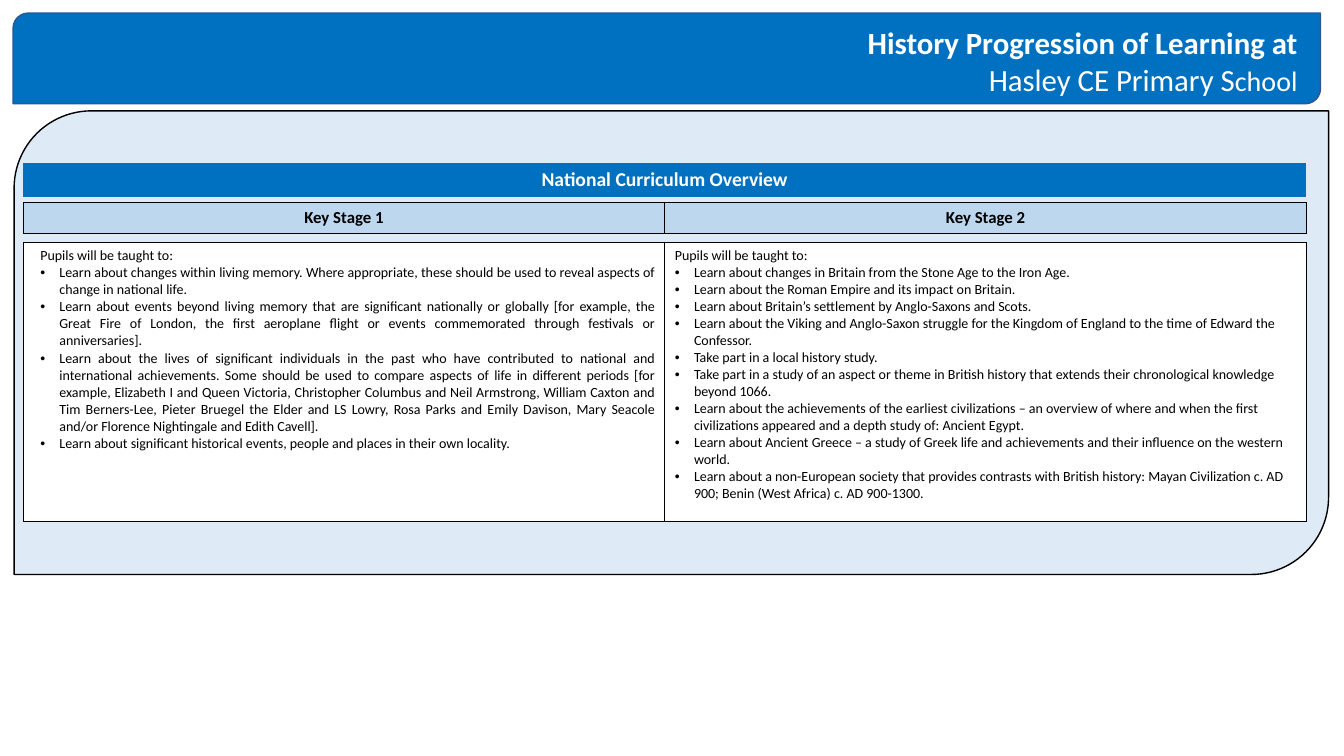
from dataclasses import dataclass

import lxml.etree
import pptx
import pptx.dml.color
import pptx.enum.shapes
import pptx.enum.text
import pptx.oxml
import pptx.oxml.ns
import pptx.util

ALIGN = pptx.enum.text.PP_ALIGN
UNIT = 0.1  # inches in one grid column or row


@dataclass(frozen=True)
class Theme:
    font: str = "Calibri"
    blue: str = "0070C0"
    navy: str = "325491"
    pale: str = "DEEBF7"
    sky: str = "BDD7EE"
    white: str = "FFFFFF"
    black: str = "000000"
    title: float = 22
    small: float = 20
    band: float = 14
    head: float = 12
    body: float = 10


THEME = Theme()


@dataclass(frozen=True)
class Box:
    """A place on the grid, in columns and rows."""
    left: float
    top: float
    width: float
    height: float

    def emus(self) -> list[int]:
        return [grid(n) for n in (self.left, self.top, self.width, self.height)]


@dataclass(frozen=True)
class Run:
    text: str
    size: float
    color: str = THEME.black
    bold: bool = False


@dataclass(frozen=True)
class Para:
    runs: list[Run]
    align: ALIGN = ALIGN.LEFT
    left: float = 0
    hang: float = 0
    line: float = 0


@dataclass(frozen=True)
class Panel:
    box: Box
    fill: str
    edge: str


@dataclass(frozen=True)
class Table:
    box: Box
    fill: str
    cells: list[list[Para]]
    edge: float = 0.5
    anchor: pptx.enum.text.MSO_ANCHOR = pptx.enum.text.MSO_ANCHOR.MIDDLE


def grid(count: float) -> int:
    return pptx.util.Inches(count * UNIT)


def rgb(color: str) -> pptx.dml.color.RGBColor:
    return pptx.dml.color.RGBColor.from_string(color)


def write(frame, paras: list[Para]) -> None:
    for i, item in enumerate(paras):
        para = frame.paragraphs[0] if i == 0 else frame.add_paragraph()
        para.alignment = item.align
        if item.line:
            para.line_spacing = pptx.util.Pt(item.line)
            para.space_before = pptx.util.Pt(0.1)
        props = para._p.get_or_add_pPr()
        props.set("marL", str(grid(item.left)))
        props.set("indent", str(grid(-item.hang)))
        if item.hang:
            tag = pptx.oxml.ns.qn
            lxml.etree.SubElement(props, tag("a:buFont"), typeface="Arial")
            lxml.etree.SubElement(props, tag("a:buChar"), char="•")
        for part in item.runs:
            run = para.add_run()
            run.text = part.text
            run.font.name = THEME.font
            run.font.size = pptx.util.Pt(part.size)
            run.font.bold = part.bold
            run.font.color.rgb = rgb(part.color)


def outline(cell, width: float) -> None:
    """Set all four cell borders; a width of 0 hides them."""
    props = cell._tc.get_or_add_tcPr()
    paint = (f'<a:solidFill><a:srgbClr val="{THEME.black}"/></a:solidFill>'
             if width else "<a:noFill/>")
    space = pptx.oxml.ns.nsdecls("a")
    for i, side in enumerate("LRTB"):
        props.insert(i, pptx.oxml.parse_xml(
            f'<a:ln{side} {space} w="{pptx.util.Pt(width)}">{paint}</a:ln{side}>'))


def add_panel(slide, panel: Panel) -> None:
    kind = pptx.enum.shapes.MSO_SHAPE.ROUND_2_DIAG_RECTANGLE
    shape = slide.shapes.add_shape(kind, *panel.box.emus())
    shape.shadow.inherit = False
    shape.fill.solid()
    shape.fill.fore_color.rgb = rgb(panel.fill)
    shape.line.color.rgb = rgb(panel.edge)
    shape.line.width = pptx.util.Pt(1)


def add_text(slide, box: Box, paras: list[Para]) -> None:
    frame = slide.shapes.add_textbox(*box.emus()).text_frame
    frame.word_wrap = True
    frame.auto_size = pptx.enum.text.MSO_AUTO_SIZE.SHAPE_TO_FIT_TEXT
    write(frame, paras)


def add_table(slide, spec: Table) -> None:
    table = slide.shapes.add_table(1, len(spec.cells), *spec.box.emus()).table
    table.first_row = False
    table.horz_banding = False
    for cell, paras in zip(table.iter_cells(), spec.cells):
        cell.fill.solid()
        cell.fill.fore_color.rgb = rgb(spec.fill)
        cell.vertical_anchor = spec.anchor
        outline(cell, spec.edge)
        write(cell.text_frame, paras)


def label(text: str, size: float, color: str = THEME.black) -> list[Para]:
    return [Para([Run(text, size, color, True)], ALIGN.CENTER)]


def aims(points: list[str], align: ALIGN, inset: float, line: float) -> list[Para]:
    """A lead line, then one bullet for each point."""
    lead = Para([Run("Pupils will be taught to:", THEME.body)], align, inset, 0, line)
    return [lead] + [Para([Run(text, THEME.body)], align, inset + 1.9, 1.9, line)
                     for text in points]


STAGE1 = [
    "Learn about changes within living memory. Where appropriate, these should be used to reveal aspects of change in national life.",
    "Learn about events beyond living memory that are significant nationally or globally [for example, the Great Fire of London, the first aeroplane flight or events commemorated through festivals or anniversaries].",
    "Learn about the lives of significant individuals in the past who have contributed to national and international achievements. Some should be used to compare aspects of life in different periods [for example, Elizabeth I and Queen Victoria, Christopher Columbus and Neil Armstrong, William Caxton and Tim Berners-Lee, Pieter Bruegel the Elder and LS Lowry, Rosa Parks and Emily Davison, Mary Seacole and/or Florence Nightingale and Edith Cavell].",
    "Learn about significant historical events, people and places in their own locality.",
]
STAGE2 = [
    "Learn about changes in Britain from the Stone Age to the Iron Age.",
    "Learn about the Roman Empire and its impact on Britain.",
    "Learn about Britain’s settlement by Anglo-Saxons and Scots.",
    "Learn about the Viking and Anglo-Saxon struggle for the Kingdom of England to the time of Edward the Confessor.",
    "Take part in a local history study.",
    "Take part in a study of an aspect or theme in British history that extends their chronological knowledge beyond 1066.",
    "Learn about the achievements of the earliest civilizations – an overview of where and when the first civilizations appeared and a depth study of: Ancient Egypt.",
    "Learn about Ancient Greece – a study of Greek life and achievements and their influence on the western world.",
    "Learn about a non-European society that provides contrasts with British history: Mayan Civilization c. AD 900; Benin (West Africa) c. AD 900-1300.",
]
TITLE = [
    Para([Run("History Progression of Learning at", THEME.title, THEME.white, True)],
         ALIGN.RIGHT),
    Para([Run("Hasley CE Primary S", THEME.title, THEME.white),
          Run("chool", THEME.small, THEME.white)], ALIGN.RIGHT),
]
TABLES = [
    Table(Box(2.3, 16.2, 127.3, 3.3), THEME.blue,
          [label("National Curriculum Overview", THEME.band, THEME.white)], edge=0),
    Table(Box(2.3, 20.1, 127.3, 3), THEME.sky,
          [label(f"Key Stage {n}", THEME.head) for n in (1, 2)]),
    Table(Box(2.3, 24, 127.3, 27.7), THEME.white,
          [aims(STAGE1, ALIGN.JUSTIFY, 0.7, 12.2), aims(STAGE2, ALIGN.LEFT, 0, 0)],
          anchor=pptx.enum.text.MSO_ANCHOR.TOP),
]


def main() -> None:
    deck = pptx.Presentation()
    deck.slide_width, deck.slide_height = grid(133.33), grid(75)
    slide = deck.slides.add_slide(deck.slide_layouts[6])
    add_panel(slide, Panel(Box(1.3, 1.3, 129.7, 9), THEME.blue, THEME.navy))
    add_text(slide, Box(64.2, 1.9, 65.5, 8.4), TITLE)
    add_panel(slide, Panel(Box(1.4, 11, 130.4, 46), THEME.pale, THEME.black))
    for table in TABLES:
        add_table(slide, table)
    deck.save("out.pptx")


if __name__ == "__main__":
    main()
